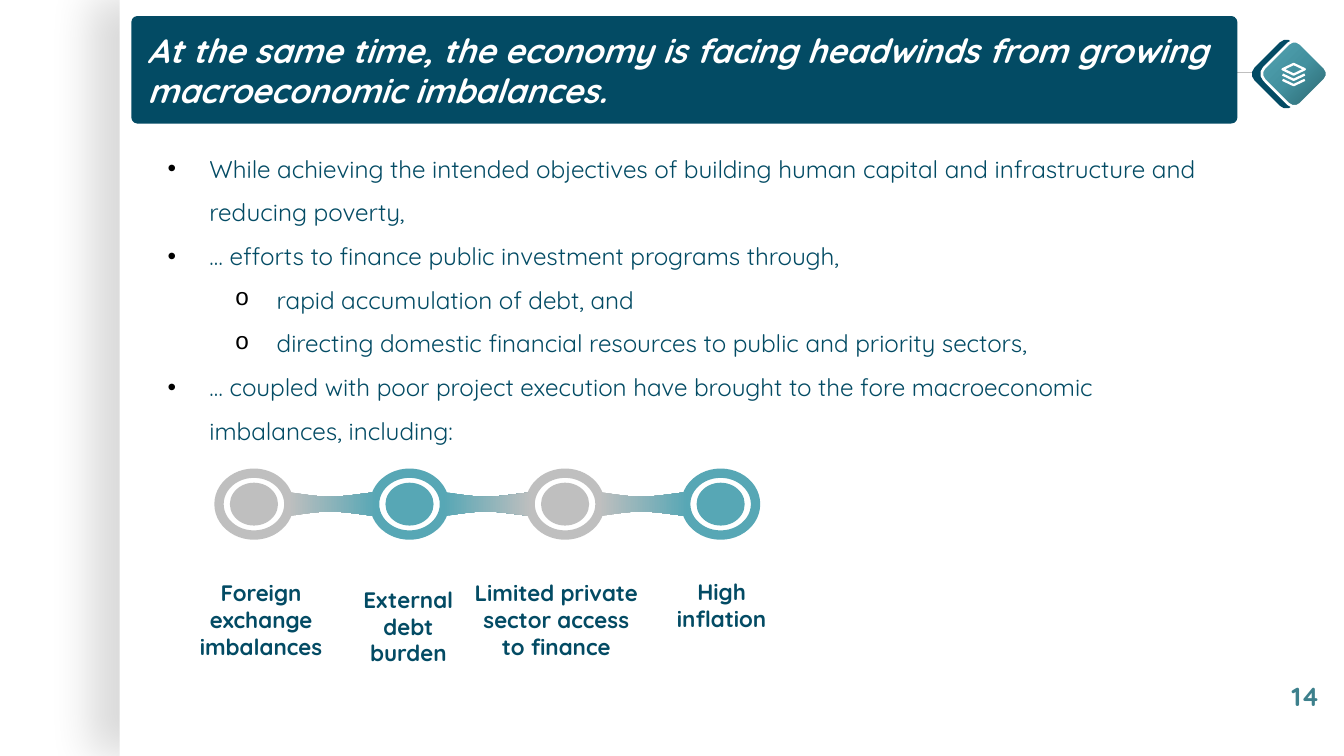
from pptx import Presentation, util as u
from pptx.dml.color import RGBColor
from pptx.enum import shapes, text
from pptx.oxml import parse_xml
from pptx.oxml.ns import nsdecls, qn

COLORS = {"white": "FFFFFF", "black": "000000", "navy": "034B64", "teal": "57A7B5",
          "grey": "BFBFBF", "number": "3D808C"}
ICON_STOPS = [(0, "2F666F"), (26, "377B86"), (50, "43919F"), (100, "57A7B5")]
SHAPE = shapes.MSO_SHAPE


def rgb(name):
    return RGBColor.from_string(COLORS[name])


def xml(tag, inner="", attrs=""):
    return parse_xml(f"<a:{tag} {nsdecls('a')} {attrs}>{inner}</a:{tag}>")


def add_run(p, content, size=12, color="navy", bold=False, italic=False):
    r = p.add_run()
    r.text = content
    r.font.name = "Quicksand"
    r.font.size = u.Pt(size)
    r.font.bold, r.font.italic = bold, italic
    r.font.color.rgb = rgb(color)
    return r


def curve(p0, p1, p2, p3, steps=16):
    """Points along a cubic Bezier curve."""
    for i in range(steps + 1):
        t = i / steps
        k = ((1 - t) ** 3, 3 * t * (1 - t) ** 2, 3 * t * t * (1 - t), t ** 3)
        yield tuple(sum(a * q[d] for a, q in zip(k, (p0, p1, p2, p3))) for d in (0, 1))


class Deck:
    """Holds the style and the current slide; lengths are in centimetres."""

    def __init__(self, s):
        self.s = s

    def paint(self, sp, fill=None, line=None, width=1):
        sp.shadow.inherit = False
        if fill:
            sp.fill.solid()
            sp.fill.fore_color.rgb = rgb(fill)
        else:
            sp.fill.background()
        if line:
            sp.line.color.rgb = rgb(line)
            sp.line.width = u.Pt(width)
        else:
            sp.line.fill.background()
        return sp

    def shape(self, kind, x, y, w, h, fill, line=None, width=1):
        sp = self.s.shapes.add_shape(kind, u.Cm(x), u.Cm(y), u.Cm(w), u.Cm(h))
        return self.paint(sp, fill, line, width)

    def gradient(self, sp, stops, direction):
        gs = "".join(f'<a:gs pos="{pos * 1000}"><a:srgbClr val="{c}"/></a:gs>'
                     for pos, c in stops)
        sp.fill.background()
        pr = sp._element.spPr
        pr.replace(pr.find(qn("a:noFill")),
                   xml("gradFill", f"<a:gsLst>{gs}</a:gsLst>{direction}", 'rotWithShape="1"'))

    def freeform(self, points, close=True, **style):
        pts = [(u.Cm(x), u.Cm(y)) for x, y in points]
        fb = self.s.shapes.build_freeform(*pts[0])
        fb.add_line_segments(pts[1:], close=close)
        return self.paint(fb.convert_to_shape(), **style)

    def line(self, x1, y1, x2, y2, color, width):
        cn = self.s.shapes.add_connector(shapes.MSO_CONNECTOR.STRAIGHT,
                                         u.Cm(x1), u.Cm(y1), u.Cm(x2), u.Cm(y2))
        cn.line.color.rgb = rgb(color)
        cn.line.width = u.Pt(width)
        cn._element.spPr.append(xml("effectLst"))

    def textbox(self, x, y, w, h, wrap=True):
        tf = self.s.shapes.add_textbox(u.Cm(x), u.Cm(y), u.Cm(w), u.Cm(h)).text_frame
        tf.word_wrap = wrap
        return tf

    def label(self, x, y, w, h, content):
        p = self.textbox(x, y, w, h).paragraphs[0]
        p.alignment = text.PP_ALIGN.CENTER
        add_run(p, content, bold=True)

    def bullets(self, x, y, w, h, items):
        tf = self.textbox(x, y, w, h)
        for i, (mark, content) in enumerate(items):
            p = tf.paragraphs[0] if i == 0 else tf.add_paragraph()
            p.line_spacing = 1.5
            sub = mark == "o"
            pPr = p._p.get_or_add_pPr()
            pPr.set("marL", str(u.Cm(2.06 if sub else 0.79)))
            pPr.set("indent", str(-u.Cm(0.79)))
            pPr.append(xml("buClr", f'<a:srgbClr val="{COLORS["black"]}"/>'))
            pPr.append(xml("buFont", attrs=f'typeface="{"Courier New" if sub else "Arial"}"'))
            pPr.append(xml("buChar", attrs=f'char="{mark}"'))
            p.level = int(sub)
            add_run(p, content, 13)


def main():
    prs = Presentation()
    prs.slide_width, prs.slide_height = u.Cm(25.4), u.Cm(14.29)
    s = prs.slides.add_slide(prs.slide_layouts[6])
    deck = Deck(s)

    # White page with a soft shadow on its left
    page = deck.shape(SHAPE.RECTANGLE, 2.26, 0, 23.14, 14.29, "white")
    shade = f'<a:srgbClr val="{COLORS["black"]}"><a:alpha val="15000"/></a:srgbClr>'
    page._element.spPr.find(qn("a:effectLst")).append(xml(
        "outerShdw", shade, f'blurRad="{u.Pt(22.5)}" dist="{u.Pt(15)}" dir="10800000" '
        'algn="r" rotWithShape="0"'))

    # Title banner
    deck.line(22.38, 1.37, 24.41, 1.37, "grey", 0.75)
    banner = deck.shape(SHAPE.ROUNDED_RECTANGLE, 2.51, 0.33, 20.85, 1.98, "navy", "navy", 1.5)
    banner.adjustments[0] = 0.046
    tf = banner.text_frame
    tf.word_wrap = True
    tf.vertical_anchor = text.MSO_ANCHOR.MIDDLE
    tf.paragraphs[0].alignment = text.PP_ALIGN.LEFT
    add_run(tf.paragraphs[0], "At the same time, the economy is facing headwinds from growing "
            "macroeconomic imbalances.", 18, "white", bold=True, italic=True)

    # Slide number
    number = deck.textbox(24.16, 12.73, 1.07, 0.86, wrap=False)
    add_run(number.paragraphs[0], "14", 14, "number", bold=True)

    # Chain of rings
    left, step, middle = 4.8, 2.94, 9.53
    chain = ["grey", "teal", "grey", "teal"]
    centres = [left + i * step for i in range(len(chain))]

    def discs(w, h, fills, **style):
        for cx, fill, color in zip(centres, fills, chain):
            edge = {"line": color, **style} if style else {}
            deck.shape(SHAPE.OVAL, cx - w / 2, middle - h / 2, w, h, fill, **edge)

    discs(1.32, 1.17, ["white"] * len(chain), width=5)
    for cx, start, end in zip(centres, chain, chain[1:]):
        x1, x2 = cx + 0.64, cx + 2.32
        top = list(curve((x1, -0.23), (x1 + 0.8, -0.1), (x1 + 0.84, -0.12), (x2, -0.23)))
        outline = [(x, middle + y) for x, y in top] + [(x, middle - y) for x, y in top[::-1]]
        neck = deck.freeform(outline)
        deck.gradient(neck, [(0, COLORS[start]), (100, COLORS[end])], '<a:lin ang="0" scaled="0"/>')
    discs(0.91, 0.81, chain)

    # Ring labels
    for x, y, w, h, content in [
            (3.4, 10.82, 3.07, 1.9, "Foreign exchange imbalances"),
            (6.27, 10.95, 2.9, 1.02, "External debt burden"),
            (8.71, 10.82, 3.61, 1.8, "Limited private sector access to finance"),
            (12.19, 10.8, 2.9, 0.61, "High inflation")]:
        deck.label(x, y, w, h, content)

    # Body text
    deck.bullets(2.92, 2.51, 20.04, 5.99, [
        ("•", "While achieving the intended objectives of building human capital and "
              "infrastructure and reducing poverty,"),
        ("•", "… efforts to finance public investment programs through,"),
        ("o", "rapid accumulation of debt, and"),
        ("o", "directing domestic financial resources to public and priority sectors,"),
        ("•", "… coupled with poor project execution have brought to the fore "
              "macroeconomic imbalances, including:")])

    # Diamond badge with a layers icon
    back = deck.shape(SHAPE.ROUNDED_RECTANGLE, 23.8, 0.89, 1.02, 1.02, "navy")
    front = deck.shape(SHAPE.ROUNDED_RECTANGLE, 23.98, 0.91, 0.97, 0.97, "teal", "white", 1.42)
    back.rotation = front.rotation = 315
    deck.gradient(front, ICON_STOPS,
                  '<a:path path="circle"><a:fillToRect l="100000" t="100000"/></a:path>')
    cx, half = 24.45, 0.21
    stroke = {"line": "white", "width": 1.25}
    deck.freeform([(cx - half, 1.31), (cx, 1.21), (cx + half, 1.31), (cx, 1.41)], **stroke)
    for y in (1.41, 1.51):
        deck.freeform([(cx - half, y), (cx, y + 0.1), (cx + half, y)], close=False, **stroke)

    prs.save("out.pptx")


if __name__ == "__main__":
    main()
